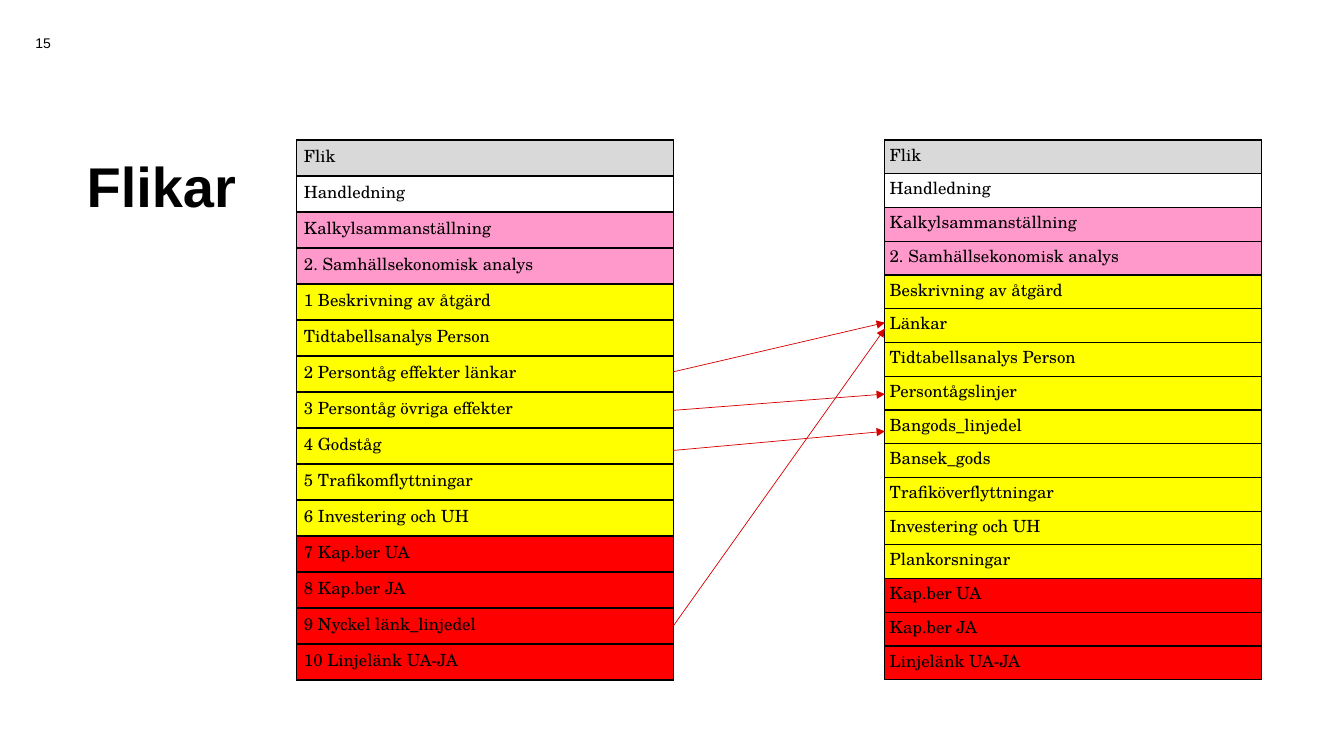
from dataclasses import dataclass

from pptx import Presentation
from pptx.dml.color import RGBColor
from pptx.enum import shapes, text
from pptx.oxml import parse_xml
from pptx.oxml.ns import nsdecls
from pptx.util import Cm, Pt


@dataclass(frozen=True)
class Theme:
    heading_font: str = "Arial"
    table_font: str = "TeX Gyre Schola"
    title_size: int = 40
    number_size: int = 10
    table_size: int = 12
    ink: str = "000000"
    arrow: str = "D70000"
    grey: str = "D9D9D9"
    pink: str = "FF99CC"
    yellow: str = "FFFF00"
    red: str = "FF0000"


THEME = Theme()
TABLE_TOP, TABLE_WIDTH, TABLE_HEIGHT = 3.53, 9.5, 13.61
OLD_LEFT, NEW_LEFT = 7.47, 22.3
ANALYSIS_TAB = "2. Samhällsekonomisk analys"
SHARED_TABS = [
    (THEME.grey, ["Flik"]),
    (None, ["Handledning"]),
    (THEME.pink, ["Kalkylsammanställning", ANALYSIS_TAB]),
]
OLD_TABS = SHARED_TABS + [
    (THEME.yellow, ["1 Beskrivning av åtgärd", "Tidtabellsanalys Person",
                    "2 Persontåg effekter länkar", "3 Persontåg övriga effekter",
                    "4 Godståg", "5 Trafikomflyttningar", "6 Investering och UH"]),
    (THEME.red, ["7 Kap.ber UA", "8 Kap.ber JA", "9 Nyckel länk_linjedel",
                 "10 Linjelänk UA-JA"]),
]
NEW_TABS = SHARED_TABS + [
    (THEME.yellow, ["Beskrivning av åtgärd", "Länkar", "Tidtabellsanalys Person",
                    "Persontågslinjer", "Bangods_linjedel", "Bansek_gods",
                    "Trafiköverflyttningar", "Investering och UH", "Plankorsningar"]),
    (THEME.red, ["Kap.ber UA", "Kap.ber JA", "Linjelänk UA-JA"]),
]
ARROW_HEIGHTS = [(9.37, 8.13), (10.34, 9.93), (11.35, 10.87), (15.77, 8.28)]


def write(frame, words, *, font, size, bold=False, align=text.PP_ALIGN.LEFT,
          line_spacing=None, space_after=None):
    paragraph = frame.paragraphs[0]
    paragraph.text = words
    paragraph.alignment = align
    paragraph.line_spacing = line_spacing
    paragraph.space_after = space_after
    paragraph.font.name = font
    paragraph.font.size = Pt(size)
    paragraph.font.bold = bold
    paragraph.font.color.rgb = RGBColor.from_string(THEME.ink)


def add_title(slide, words):
    title = slide.shapes.title
    title.left, title.top, title.width, title.height = Cm(1.93), Cm(3.53), Cm(14), Cm(2.49)
    title.text_frame.vertical_anchor = text.MSO_ANCHOR.MIDDLE
    write(title.text_frame, words, font=THEME.heading_font, size=THEME.title_size,
          bold=True, line_spacing=0.9)


def add_page_number(slide, number):
    frame = slide.shapes.add_textbox(Cm(0), Cm(0.56), Cm(2.18), Cm(1.02)).text_frame
    frame.word_wrap = True
    frame.vertical_anchor = text.MSO_ANCHOR.MIDDLE
    write(frame, number, font=THEME.heading_font, size=THEME.number_size,
          align=text.PP_ALIGN.CENTER)


def outline_cell(cell):
    properties = cell._tc.get_or_add_tcPr()
    for side in "LRTB":
        properties.append(parse_xml(
            f'<a:ln{side} {nsdecls("a")} w="{Pt(1)}"><a:solidFill>'
            f'<a:srgbClr val="{THEME.ink}"/></a:solidFill></a:ln{side}>'))


def add_tab_table(slide, left, groups, inset):
    tabs = [(color, tab) for color, names in groups for tab in names]
    table = slide.shapes.add_table(len(tabs), 1, Cm(left), Cm(TABLE_TOP),
                                   Cm(TABLE_WIDTH), Cm(TABLE_HEIGHT)).table
    table.first_row = table.horz_banding = False
    for row, (color, tab) in zip(table.rows, tabs):
        row.height = Cm(TABLE_HEIGHT / len(tabs))
        cell = row.cells[0]
        cell.margin_left = cell.margin_right = Cm(inset)
        cell.margin_top = cell.margin_bottom = 0
        cell.vertical_anchor = text.MSO_ANCHOR.MIDDLE
        outline_cell(cell)
        if color:
            cell.fill.solid()
            cell.fill.fore_color.rgb = RGBColor.from_string(color)
        else:
            cell.fill.background()
        write(cell.text_frame, tab, font=THEME.table_font, size=THEME.table_size,
              line_spacing=Pt(14), space_after=Pt(14 if tab == ANALYSIS_TAB else 6))


def add_arrow(slide, start, end):
    arrow = slide.shapes.add_connector(
        shapes.MSO_CONNECTOR.STRAIGHT, Cm(OLD_LEFT + TABLE_WIDTH), Cm(start),
        Cm(NEW_LEFT), Cm(end))
    arrow.line.width = Pt(0.5)
    arrow.line.color.rgb = RGBColor.from_string(THEME.arrow)
    arrow.line._get_or_add_ln().append(
        parse_xml(f'<a:tailEnd {nsdecls("a")} type="triangle"/>'))
    arrow._element.spPr.append(parse_xml(f'<a:effectLst {nsdecls("a")}/>'))


def main():
    """Build the slide that maps the old workbook tabs to the new ones."""
    deck = Presentation()
    deck.slide_width, deck.slide_height = Cm(33.87), Cm(19.05)
    slide = deck.slides.add_slide(deck.slide_layouts.get_by_name("Title Only"))
    add_title(slide, "Flikar")
    add_page_number(slide, "15")
    add_tab_table(slide, NEW_LEFT, NEW_TABS, inset=0.12)
    add_tab_table(slide, OLD_LEFT, OLD_TABS, inset=0.19)
    for start, end in ARROW_HEIGHTS:
        add_arrow(slide, start, end)
    deck.save("out.pptx")


if __name__ == "__main__":
    main()
